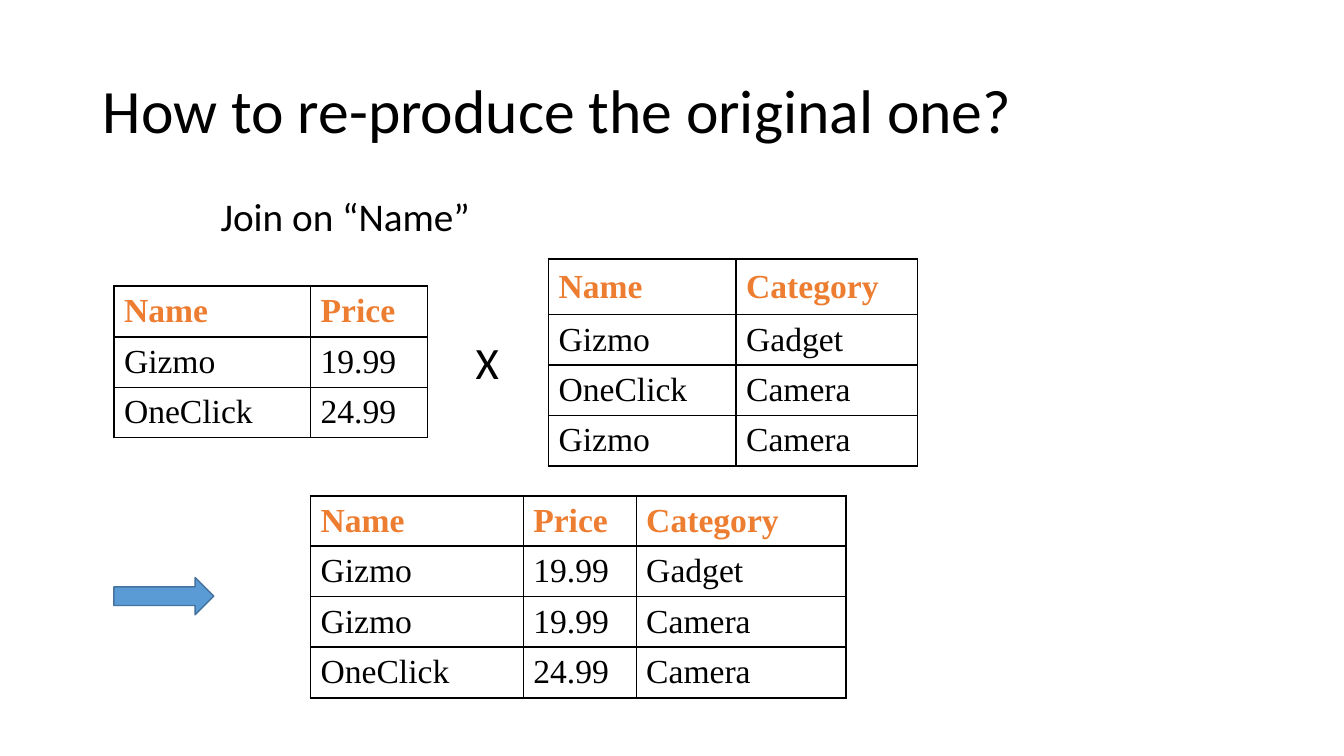
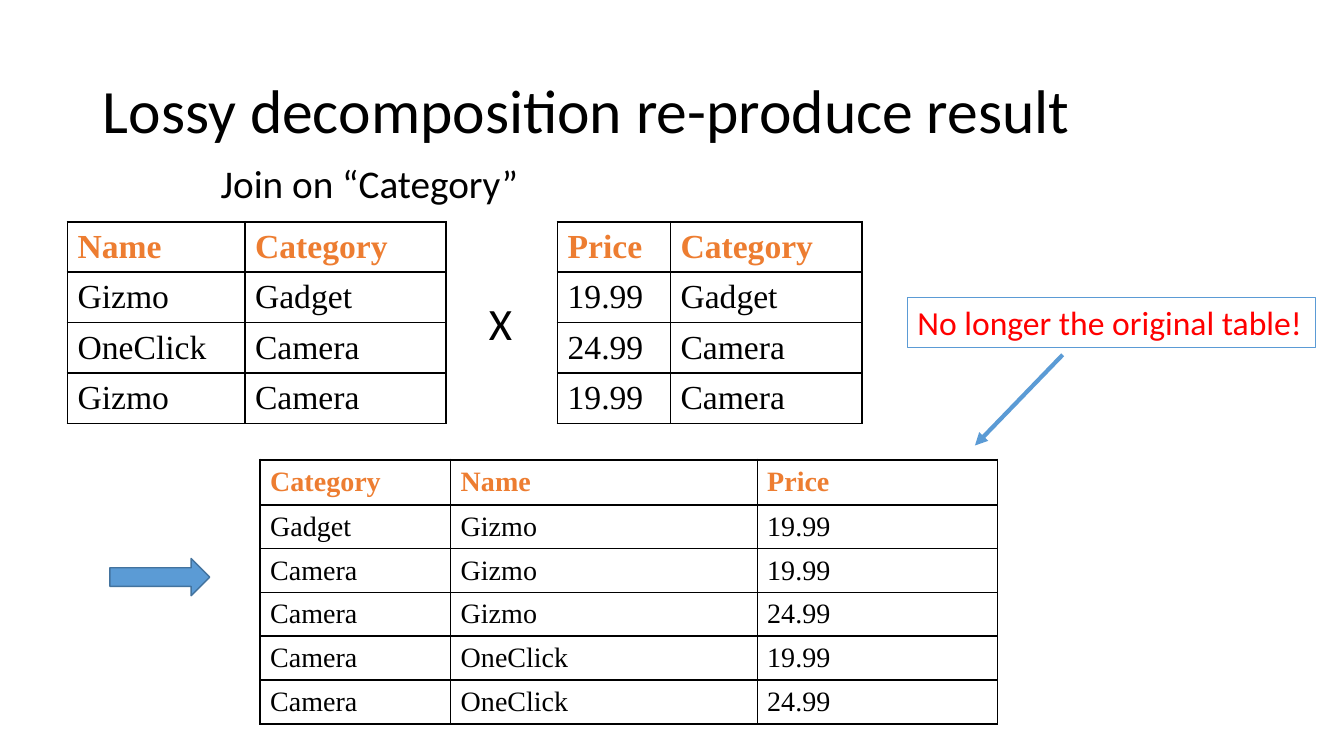
"""Build two slides on joining decomposed tables back together."""
from lxml import etree
from pptx import Presentation
from pptx.dml.color import RGBColor
from pptx.enum.shapes import MSO_CONNECTOR, MSO_SHAPE
from pptx.enum.text import MSO_ANCHOR, MSO_AUTO_SIZE, PP_ALIGN
from pptx.oxml.ns import qn
from pptx.util import Inches, Pt

STRAIGHT = MSO_CONNECTOR.STRAIGHT
RIGHT_ARROW = MSO_SHAPE.RIGHT_ARROW
MIDDLE = MSO_ANCHOR.MIDDLE
NO_FIT = MSO_AUTO_SIZE.NONE
GROW = MSO_AUTO_SIZE.SHAPE_TO_FIT_TEXT
LEFT = PP_ALIGN.LEFT

COLORS = {
    "text": "000000",
    "header": "ED7D31",
    "accent": "5B9BD5",
    "accent_edge": "43739E",
    "warning": "FF0000",
}
BODY_FONT = "Calibri"
TABLE_FONT = "Times New Roman"
TITLE_ONLY = 5
THIN, THICK = 1, 1.5


def color(name):
    """Return the named colour."""
    return RGBColor.from_string(COLORS[name])


def format_text(frame, size, font=BODY_FONT, tone="text", bold=False):
    """Format every run of a text frame."""
    for para in frame.paragraphs:
        para.alignment = LEFT
        for span in para.runs:
            span.font.size = Pt(size)
            span.font.name = font
            span.font.bold = bold
            span.font.color.rgb = color(tone)


def add_titled_slide(deck, title):
    """Add a title-only slide with the shared title style."""
    page = deck.slides.add_slide(deck.slide_layouts[TITLE_ONLY])
    box = page.shapes.title
    box.left, box.top = Inches(0.92), Inches(0.4)
    box.width, box.height = Inches(11.5), Inches(1.45)
    frame = box.text_frame
    frame.text = title
    frame.auto_size = NO_FIT
    frame.vertical_anchor = MIDDLE
    frame.paragraphs[0].line_spacing = 0.9
    format_text(frame, 44)
    return page


def add_label(page, text, left, top, width, height, size, tone="text"):
    """Add a one-line text box and return it."""
    box = page.shapes.add_textbox(
        Inches(left), Inches(top), Inches(width), Inches(height))
    frame = box.text_frame
    frame.text = text
    frame.word_wrap = False
    frame.auto_size = GROW
    format_text(frame, size, tone=tone)
    return box


def add_join_sign(page, left, top):
    """Add the join sign between two tables."""
    add_label(page, "X", left, top, 0.44, 0.64, 32)


def add_result_arrow(page, left, top):
    """Add the block arrow that points at the joined table."""
    arrow = page.shapes.add_shape(
        RIGHT_ARROW, Inches(left), Inches(top), Inches(0.99), Inches(0.37))
    arrow.shadow.inherit = False
    arrow.fill.solid()
    arrow.fill.fore_color.rgb = color("accent")
    arrow.line.color.rgb = color("accent_edge")
    arrow.line.width = Pt(1)


def add_pointer(page, start, end):
    """Add a line with an arrowhead at its end."""
    points = [Inches(value) for value in (*start, *end)]
    pointer = page.shapes.add_connector(STRAIGHT, *points)
    pointer.line.color.rgb = color("accent")
    pointer.line.width = Pt(3)
    properties = pointer._element.spPr
    outline = properties.find(qn("a:ln"))
    etree.SubElement(outline, qn("a:tailEnd"), type="triangle")
    etree.SubElement(properties, qn("a:effectLst"))


def set_borders(cell, widths):
    """Draw the cell's left, right, top and bottom borders."""
    properties = cell._tc.get_or_add_tcPr()
    for side, width in zip("LRTB", widths):
        line = etree.SubElement(
            properties, qn(f"a:ln{side}"), w=str(Pt(width)))
        fill = etree.SubElement(line, qn("a:solidFill"))
        etree.SubElement(fill, qn("a:srgbClr"), val=COLORS["text"])


def add_grid(page, left, top, widths, heights, rows, thick_rules,
             size=24, right_edge=THICK):
    """Add a table with header and body heights and chosen thick rules."""
    header_height, body_height = heights
    total = header_height + body_height * (len(rows) - 1)
    table = page.shapes.add_table(
        len(rows), len(widths), Inches(left), Inches(top),
        Inches(sum(widths)), Inches(total)).table
    table.first_row = table.horz_banding = False
    for column, width in zip(table.columns, widths):
        column.width = Inches(width)
    verticals = [THICK] + [THIN] * (len(widths) - 1) + [right_edge]
    rules = [THICK if index in thick_rules else THIN
             for index in range(len(rows) + 1)]
    for r, values in enumerate(rows):
        is_header = r == 0
        table.rows[r].height = Inches(
            header_height if is_header else body_height)
        for c, value in enumerate(values):
            cell = table.cell(r, c)
            cell.text_frame.text = value
            cell.vertical_anchor = MIDDLE
            format_text(cell.text_frame, size, TABLE_FONT,
                        "header" if is_header else "text", is_header)
            set_borders(cell, verticals[c:c + 2] + rules[r:r + 2])
            cell.fill.background()


def add_lossless_slide(deck):
    """Add the slide whose join restores the table."""
    page = add_titled_slide(deck, "How to re-produce the original one?")
    add_label(page, "Join on “Name”", 2.09, 1.86, 2.7, 0.57, 28)
    add_grid(page, 1.13, 2.84, (1.95, 1.16), (0.47, 0.47), [
        ("Name", "Price"),
        ("Gizmo", "19.99"),
        ("OneClick", "24.99"),
    ], {0, 1})
    add_join_sign(page, 4.62, 3.27)
    add_grid(page, 5.44, 2.57, (1.86, 1.8), (0.55, 0.47), [
        ("Name", "Category"),
        ("Gizmo", "Gadget"),
        ("OneClick", "Camera"),
        ("Gizmo", "Camera"),
    ], {0, 1, 4})
    add_result_arrow(page, 1.13, 5.73)
    add_grid(page, 3.08, 4.92, (2.11, 1.12, 2.08), (0.5, 0.5), [
        ("Name", "Price", "Category"),
        ("Gizmo", "19.99", "Gadget"),
        ("Gizmo", "19.99", "Camera"),
        ("OneClick", "24.99", "Camera"),
    ], {0, 1, 3, 4})


def add_lossy_slide(deck):
    """Add the slide whose join yields extra rows."""
    page = add_titled_slide(deck, "Lossy decomposition re-produce result")
    add_label(page, "Join on “Category”", 2.09, 1.53, 3.18, 0.57, 28)
    add_grid(page, 0.67, 2.2, (1.76, 1.99), (0.5, 0.5), [
        ("Name", "Category"),
        ("Gizmo", "Gadget"),
        ("OneClick", "Camera"),
        ("Gizmo", "Camera"),
    ], {0, 1, 4})
    add_join_sign(page, 4.75, 2.88)
    add_grid(page, 5.53, 2.2, (1.12, 1.9), (0.5, 0.5), [
        ("Price", "Category"),
        ("19.99", "Gadget"),
        ("24.99", "Camera"),
        ("19.99", "Camera"),
    ], {0, 1, 4})
    add_result_arrow(page, 1.09, 5.54)
    add_grid(page, 2.58, 4.56, (1.89, 3.04, 2.38), (0.45, 0.43), [
        ("Category", "Name", "Price"),
        ("Gadget", "Gizmo", "19.99"),
        ("Camera", "Gizmo", "19.99"),
        ("Camera", "Gizmo", "24.99"),
        ("Camera", "OneClick", "19.99"),
        ("Camera", "OneClick", "24.99"),
    ], {0, 1, 3, 4, 5, 6}, size=20, right_edge=THIN)
    note = add_label(page, "No longer the original table!",
                     9, 2.95, 4.05, 0.5, 24, "warning")
    note.line.color.rgb = color("accent")
    note.line.width = Pt(1)
    add_pointer(page, (10.54, 3.52), (9.67, 4.42))


def main():
    """Build and save the deck."""
    deck = Presentation()
    deck.slide_width, deck.slide_height = Inches(13.33), Inches(7.5)
    add_lossless_slide(deck)
    add_lossy_slide(deck)
    deck.save("out.pptx")


if __name__ == "__main__":
    main()
